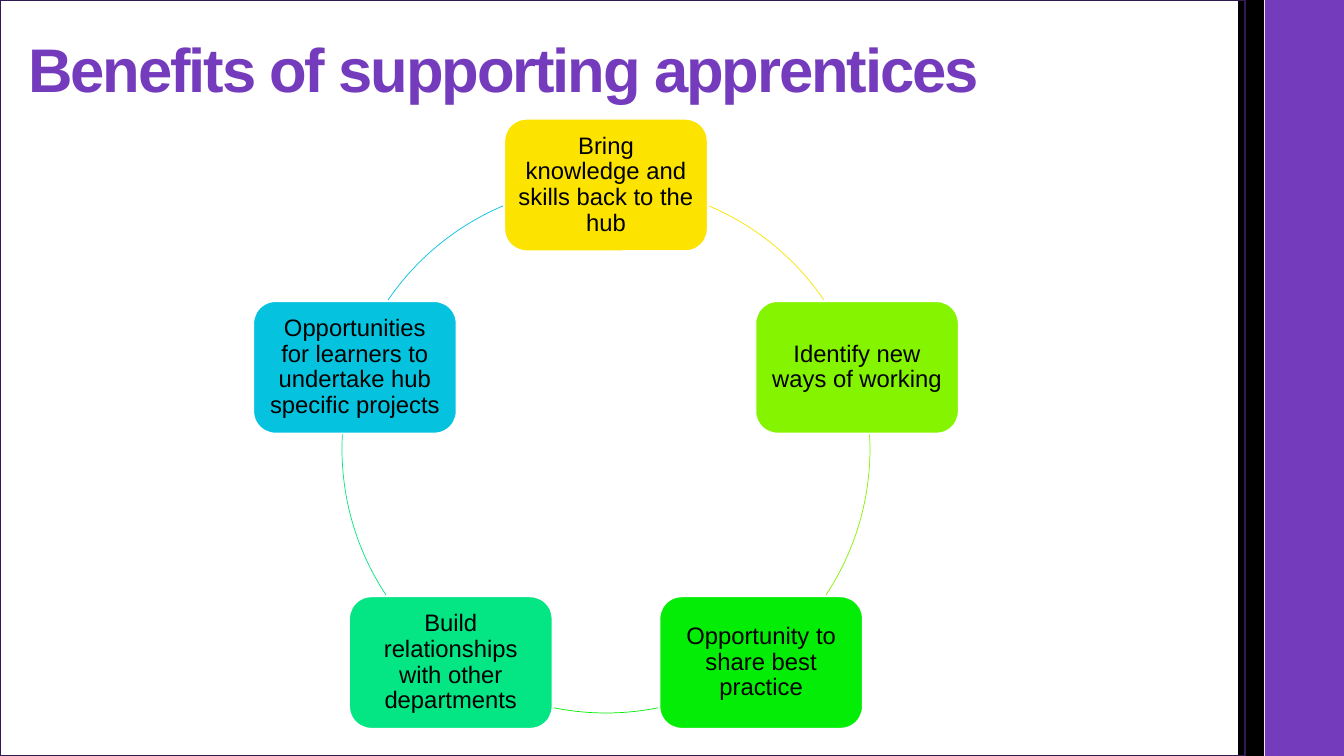
import math
from pptx import Presentation, util as u
from pptx.dml.color import RGBColor
from pptx.enum import shapes, text

TITLE = "Benefits of supporting apprentices"
COLOURS = {
    "purple": "753BBD", "black": "000000", "frame": "331A53", "white": "FFFFFF",
    "yellow": "FCE300", "lime": "85F401", "green": "03ED06",
    "mint": "04E584", "cyan": "05C3DE",
}
BENEFITS = [
    ("Bring knowledge and skills back to the hub", "yellow", (292.9, 325.6)),
    ("Identify new ways of working", "lime", (356.8, 33.6)),
    ("Opportunity to share best practice", "green", (78.6, 101.4)),
    ("Build relationships with other departments", "mint", (146.4, 183.2)),
    ("Opportunities for learners to undertake hub specific projects", "cyan", (214.4, 247.1)),
]
PANELS = [
    ((1265, 0, 79, 756), "purple", None),
    ((1238, 0, 26, 756), "black", None),
    ((0, 0, 1245, 756), None, "frame"),
]
TITLE_BOX = (28, 32, 1138, 74)
CENTRE_X, CENTRE_Y, RADIUS = 606, 449, 264
BOX_W, BOX_H, BOX_INSET = 203, 132, 7
EMU_PER_PX = 914400 / 100.8


def px(n):
    return u.Emu(round(n * EMU_PER_PX))


def rgb(name):
    return RGBColor.from_string(COLOURS[name])


def add_shape(s, kind, box, fill=None, line=None, width=1):
    sp = s.shapes.add_shape(kind, *map(px, box))
    sp.shadow.inherit = False
    if fill:
        sp.fill.solid()
        sp.fill.fore_color.rgb = rgb(fill)
    else:
        sp.fill.background()
    if line:
        sp.line.color.rgb = rgb(line)
        sp.line.width = u.Pt(width)
    else:
        sp.line.fill.background()
    return sp


def write(sp, words, size, colour, align, anchor, inset):
    tf = sp.text_frame
    tf.word_wrap = True
    tf.auto_size = text.MSO_AUTO_SIZE.NONE
    tf.vertical_anchor = anchor
    tf.margin_left = tf.margin_top = tf.margin_right = tf.margin_bottom = px(inset)
    p = tf.paragraphs[0]
    p.text = words
    p.alignment = align
    p.line_spacing = 0.9
    p.font.name = "Arial"
    p.font.size = u.Pt(size)
    p.font.color.rgb = rgb(colour)
    return p


def add_title(s):
    sp = s.shapes.title
    sp.left, sp.top, sp.width, sp.height = map(px, TITLE_BOX)
    p = write(sp, TITLE, 44, "purple", text.PP_ALIGN.LEFT, text.MSO_ANCHOR.BOTTOM, 0)
    p.font.bold = True
    p.runs[0].font._element.set("spc", "-150")


def add_cycle(s):
    ring = (CENTRE_X - RADIUS, CENTRE_Y - RADIUS, 2 * RADIUS, 2 * RADIUS)
    for i, (words, colour, angles) in enumerate(BENEFITS):
        turn = math.radians(360 / len(BENEFITS) * i - 90)
        left = CENTRE_X + RADIUS * math.cos(turn) - BOX_W / 2
        top = CENTRE_Y + RADIUS * math.sin(turn) - BOX_H / 2
        sp = add_shape(s, shapes.MSO_SHAPE.ROUNDED_RECTANGLE,
                       (left, top, BOX_W, BOX_H), colour, "white")
        write(sp, words, 17, "black", text.PP_ALIGN.CENTER, text.MSO_ANCHOR.MIDDLE, BOX_INSET)
        arc = add_shape(s, shapes.MSO_SHAPE.ARC, ring, line=colour, width=0.5)
        for n, angle in enumerate(angles):
            arc.adjustments[n] = angle * 0.6


def main():
    prs = Presentation()
    prs.slide_width, prs.slide_height = px(1344), px(756)
    s = prs.slides.add_slide(prs.slide_layouts[5])
    for box, fill, line in PANELS:
        add_shape(s, shapes.MSO_SHAPE.RECTANGLE, box, fill, line)
    add_title(s)
    add_cycle(s)
    prs.save("out.pptx")


if __name__ == "__main__":
    main()
